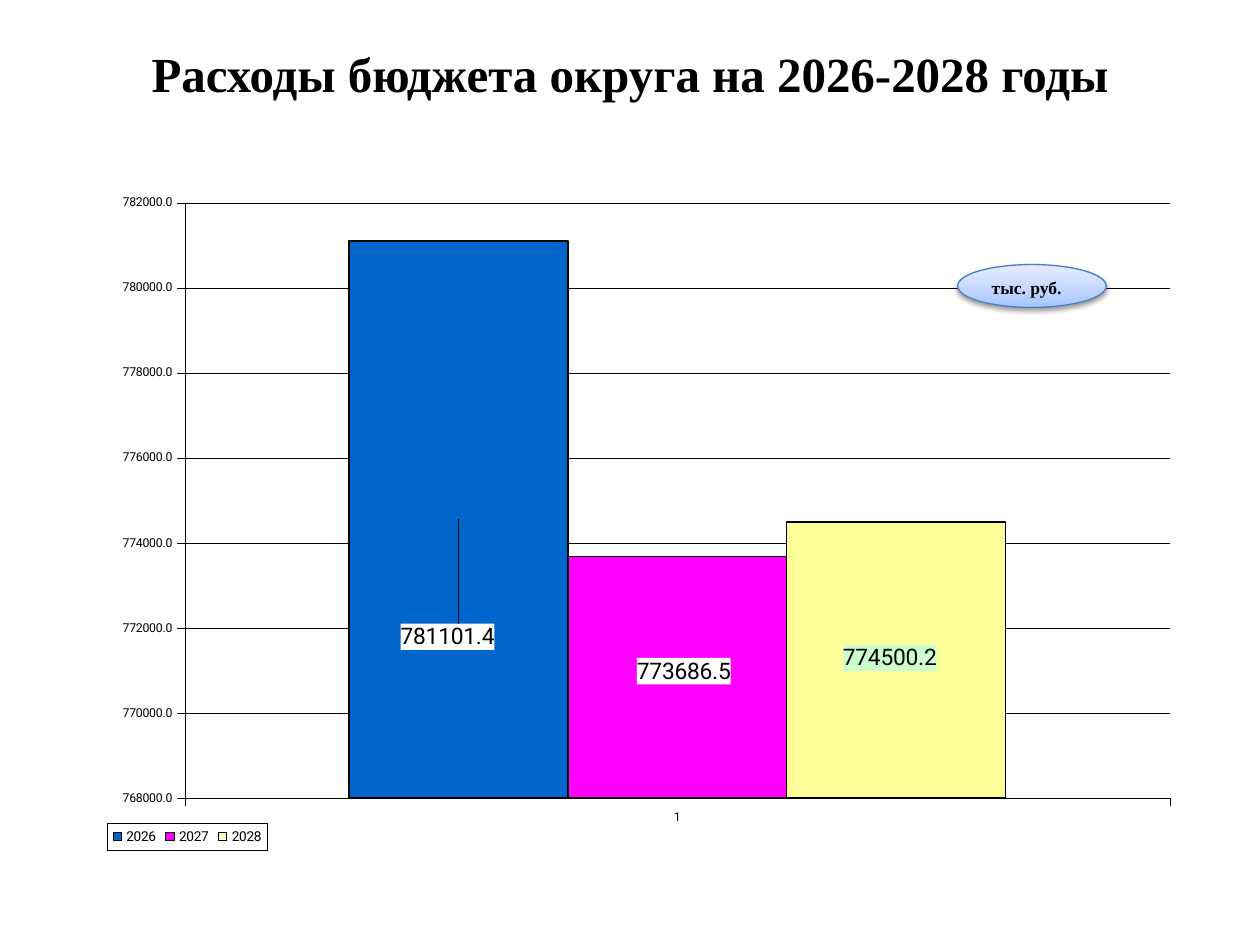
from dataclasses import dataclass

from lxml import etree
from pptx import Presentation
from pptx.chart.data import CategoryChartData
from pptx.dml.color import RGBColor
from pptx.enum import chart as ch, shapes, text
from pptx.oxml import parse_xml
from pptx.oxml.ns import nsdecls, qn
from pptx.util import Inches, Pt


@dataclass(frozen=True)
class Theme:
    ink: str = "000000"
    oval_line: str = "4B7EBC"
    oval_stops: tuple = ((0, "A4C4FF"), (35, "BFD4FF"), (100, "E6EEFF"))
    heading_font: str = "Times New Roman"
    chart_font: str = "Roboto"
    title_size: float = 28
    unit_size: float = 10
    axis_size: float = 7
    legend_size: float = 7.8
    label_size: float = 13
    hairline: float = 0.21
    bar_line: float = 0.85


@dataclass(frozen=True)
class Year:
    name: str
    value: float
    color: str
    bar_color: str
    label_fill: str
    label_shift: tuple[float, float]


THEME = Theme()
YEARS = [
    Year("2026", 781101.4, "0066CC", "0066CC", "FFFFFF", (-0.01, 0.17)),
    Year("2027", 773686.5, "FF00FF", "FF00FF", "FFFFFF", (0.006, -0.009)),
    Year("2028", 774500.2, "FFFFCC", "FFFF99", "CCFFCC", (-0.006, -0.003)),
]


def set_all(obj, values: dict) -> None:
    for name, value in values.items():
        setattr(obj, name, value)


def set_font(font, name: str, size: float, bold: bool = False) -> None:
    set_all(font, {"name": name, "size": Pt(size), "bold": bold})
    font.color.rgb = RGBColor.from_string(THEME.ink)


def set_line(line, width: float, color: str = THEME.ink) -> None:
    line.color.rgb = RGBColor.from_string(color)
    line.width = Pt(width)


def set_fill(fmt, color: str) -> None:
    fmt.fill.solid()
    fmt.fill.fore_color.rgb = RGBColor.from_string(color)


def write(sp, words: str, size: float, align, anchor) -> None:
    tf = sp.text_frame
    set_all(tf, {"word_wrap": True, "vertical_anchor": anchor})
    p = tf.paragraphs[0]
    p.alignment = align
    r = p.add_run()
    r.text = words
    set_font(r.font, THEME.heading_font, size, bold=True)


def manual_layout(x: float, y: float, w: float = 0, h: float = 0, inner: bool = False):
    """Layout as fractions of the chart; without a size it is an offset."""
    target = '<c:layoutTarget val="inner"/>' if inner else ""
    modes = '<c:xMode val="edge"/><c:yMode val="edge"/>' if w else ""
    size = f'<c:w val="{w}"/><c:h val="{h}"/>' if w else ""
    return parse_xml(
        f'<c:layout {nsdecls("c")}><c:manualLayout>{target}{modes}'
        f'<c:x val="{x}"/><c:y val="{y}"/>{size}</c:manualLayout></c:layout>')


def place_label(ser, year: Year) -> None:
    """Show the bar's value on a filled box, moved from the bar's centre."""
    labels = ser.data_labels
    set_all(labels, {"show_value": True, "number_format": "0.0",
                     "number_format_is_linked": False,
                     "position": ch.XL_LABEL_POSITION.CENTER})
    set_font(labels.font, THEME.chart_font, THEME.label_size)
    label = ser.points[0].data_label
    set_font(label.font, THEME.chart_font, THEME.label_size)
    label.position = ch.XL_LABEL_POSITION.CENTER
    d_lbl = labels._element.find(qn("c:dLbl"))
    for old in d_lbl.findall(qn("c:spPr")):
        d_lbl.remove(old)
    d_lbl.find(qn("c:idx")).addnext(manual_layout(*year.label_shift))
    d_lbl.find(qn("c:txPr")).addprevious(parse_xml(
        f'<c:spPr {nsdecls("c", "a")}><a:solidFill>'
        f'<a:srgbClr val="{year.label_fill}"/></a:solidFill></c:spPr>'))
    d_lbl.find(qn("c:layout")).addnext(parse_xml(
        f'<c:numFmt {nsdecls("c")} formatCode="0.0" sourceLinked="0"/>'))


def style_axis(axis) -> None:
    set_all(axis, {"major_tick_mark": ch.XL_TICK_MARK.OUTSIDE,
                   "minor_tick_mark": ch.XL_TICK_MARK.NONE})
    set_font(axis.tick_labels.font, THEME.chart_font, THEME.axis_size)
    set_line(axis.format.line, THEME.hairline)


def add_legend(chart) -> None:
    chart.has_legend = True
    legend = chart.legend
    set_all(legend, {"position": ch.XL_LEGEND_POSITION.BOTTOM,
                     "include_in_layout": False})
    set_font(legend.font, THEME.chart_font, THEME.legend_size)
    el = legend._element
    for old in el.findall(qn("c:layout")):
        el.remove(old)
    el.find(qn("c:legendPos")).addnext(manual_layout(0.006, 0.931, 0.147, 0.039))
    el.find(qn("c:txPr")).addprevious(parse_xml(
        f'<c:spPr {nsdecls("c", "a")}><a:ln w="{Pt(THEME.hairline)}"><a:solidFill>'
        f'<a:srgbClr val="{THEME.ink}"/></a:solidFill></a:ln></c:spPr>'))


def add_spending_chart(s) -> None:
    data = CategoryChartData(number_format="0.0")
    data.categories = ["1"]
    for year in YEARS:
        data.add_series(year.name, [year.value])
    chart = s.shapes.add_chart(
        ch.XL_CHART_TYPE.COLUMN_CLUSTERED,
        Inches(0.8), Inches(1.44), Inches(8.65), Inches(5.47), data).chart
    chart.has_title = False
    set_font(chart.font, THEME.chart_font, THEME.axis_size)

    plot = chart.plots[0]
    set_all(plot, {"gap_width": 150, "overlap": 0, "vary_by_categories": False})
    for ser, year in zip(plot.series, YEARS):
        bar = ser.points[0].format
        for fmt, color in ((ser.format, year.color), (bar, year.bar_color)):
            set_fill(fmt, color)
            set_line(fmt.line, THEME.bar_line)
        place_label(ser, year)

    style_axis(chart.category_axis)
    chart.category_axis.tick_label_position = ch.XL_TICK_LABEL_POSITION.LOW
    axis = chart.value_axis
    style_axis(axis)
    set_all(axis, {"minimum_scale": 768000, "maximum_scale": 782000,
                   "major_unit": 2000, "has_major_gridlines": True})
    set_all(axis.tick_labels, {"number_format": "0.0",
                               "number_format_is_linked": False})
    set_line(axis.major_gridlines.format.line, THEME.hairline)

    area = plot._element.getparent()
    for old in area.findall(qn("c:layout")):
        area.remove(old)
    area.insert(0, manual_layout(0.077, 0.031, 0.904, 0.864, inner=True))
    add_legend(chart)


def add_unit_oval(s) -> None:
    sp = s.shapes.add_shape(shapes.MSO_SHAPE.OVAL, Inches(7.6), Inches(2.1),
                            Inches(1.18), Inches(0.34))
    sp.shadow.inherit = False
    sp.fill.gradient()
    set_line(sp.line, 0.75, THEME.oval_line)
    pr = sp._element.spPr
    grad = pr.find(qn("a:gradFill"))
    stops = grad.find(qn("a:gsLst"))
    for old in list(stops):
        stops.remove(old)
    for pos, color in THEME.oval_stops:
        gs = etree.SubElement(stops, qn("a:gs"), pos=str(pos * 1000))
        etree.SubElement(gs, qn("a:srgbClr"), val=color)
    grad.find(qn("a:lin")).set("ang", "16200000")
    pr.find(qn("a:effectLst")).append(parse_xml(
        f'<a:outerShdw {nsdecls("a")} blurRad="{Pt(3.1)}" dist="{Pt(1.6)}" '
        f'dir="5400000" rotWithShape="0"><a:srgbClr val="{THEME.ink}">'
        '<a:alpha val="38000"/></a:srgbClr></a:outerShdw>'))
    write(sp, "тыс. руб.", THEME.unit_size, text.PP_ALIGN.LEFT, text.MSO_ANCHOR.TOP)


def main() -> None:
    prs = Presentation()
    set_all(prs, {"slide_width": Inches(10), "slide_height": Inches(7.5)})
    s = prs.slides.add_slide(prs.slide_layouts[6])
    add_spending_chart(s)
    title = s.shapes.add_textbox(Inches(0.5), Inches(0.3), Inches(9), Inches(0.55))
    write(title, "Расходы бюджета округа на 2026-2028 годы", THEME.title_size,
          text.PP_ALIGN.CENTER, text.MSO_ANCHOR.MIDDLE)
    add_unit_oval(s)
    prs.save("out.pptx")


if __name__ == "__main__":
    main()
